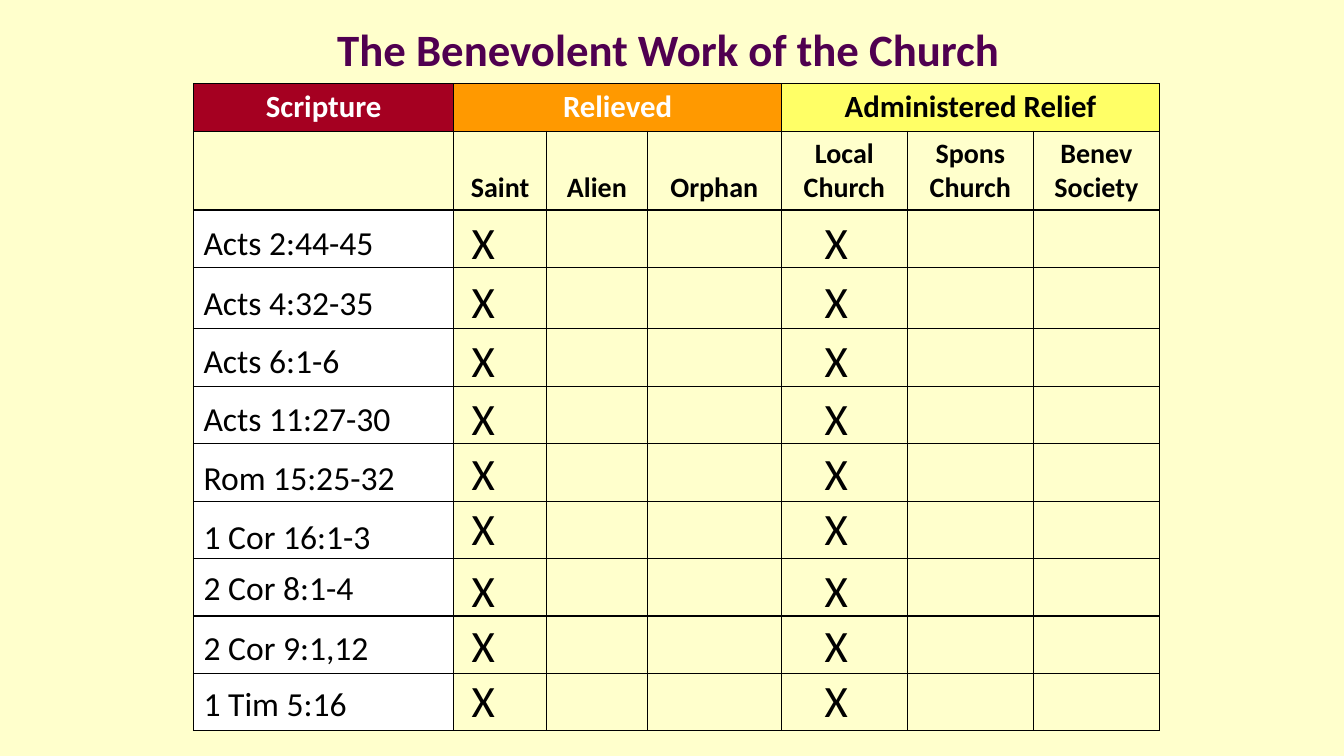
from lxml.etree import SubElement
from pptx import Presentation
from pptx.dml.color import RGBColor
from pptx.enum.text import MSO_ANCHOR as Anchor, PP_ALIGN as Align
from pptx.oxml.ns import qn
from pptx.util import Inches, Pt

CREAM = RGBColor(0xFF, 0xFF, 0xCC)
WHITE = RGBColor(0xFF, 0xFF, 0xFF)
BLACK = RGBColor(0, 0, 0)
PLUM = RGBColor(0x50, 0x00, 0x50)
RED = RGBColor(0xA5, 0x00, 0x21)
ORANGE = RGBColor(0xFF, 0x99, 0x00)
YELLOW = RGBColor(0xFF, 0xFF, 0x66)
FONT = "Calibri"

WIDTHS = [2.58, 0.92, 1, 1.33, 1.25, 1.25, 1.25]
HEIGHTS = [0.47, 0.78, 0.57, 0.61] + [0.57] * 7
# First column, last column, label, fill, text colour
GROUPS = [
    (0, 0, "Scripture", RED, WHITE),
    (1, 3, "Relieved", ORANGE, WHITE),
    (4, 6, "Administered Relief", YELLOW, BLACK),
]
HEADS = ["", "Saint", "Alien", "Orphan",
         "Local\nChurch", "Spons\nChurch", "Benev\nSociety"]
# Verse, top of its label, top of its marks (from the table's top)
VERSES = [
    ("Acts 2:44-45", 1.32, 1.25),
    ("Acts 4:32-35", 1.92, 1.84),
    ("Acts 6:1-6", 2.49, 2.42),
    ("Acts 11:27-30", 3.07, 3.0),
    ("Rom 15:25-32", 3.65, 3.54),
    ("1 Cor 16:1-3", 4.24, 4.09),
    ("2 Cor 8:1-4", 4.75, 4.7),
    ("2 Cor 9:1,12", 5.34, 5.25),
    ("1 Tim 5:16", 5.9, 5.79),
]
MARKS = [2.66, 6.16]  # Saint and Local Church, from the table's left


def write(frame, text, size, color=BLACK, bold=False, align=Align.LEFT):
    frame.text = text
    frame.word_wrap = True
    for para in frame.paragraphs:
        para.alignment = align
        font = para.font
        font.name, font.size, font.bold = FONT, Pt(size), bold
        font.color.rgb = color


def add_title(slide, left, top, width, height):
    title = slide.shapes.title
    title.left, title.top = Inches(left), Inches(top)
    title.width, title.height = Inches(width), Inches(height)
    write(title.text_frame, "The Benevolent Work of the Church",
          32, PLUM, True, Align.CENTER)
    title.text_frame.vertical_anchor = Anchor.MIDDLE


def rule_cell(cell):
    """Draw thin black borders; call before filling the cell."""
    props = cell._tc.get_or_add_tcPr()
    for side in ("a:lnL", "a:lnR", "a:lnT", "a:lnB"):
        line = SubElement(props, qn(side), w=str(Pt(1)))
        fill = SubElement(line, qn("a:solidFill"))
        SubElement(fill, qn("a:srgbClr"), val=str(BLACK))


def add_grid(slide, left, top):
    frame = slide.shapes.add_table(
        len(HEIGHTS), len(WIDTHS), Inches(left), Inches(top),
        Inches(sum(WIDTHS)), Inches(sum(HEIGHTS)))
    table = frame.table
    table.first_row = table.horz_banding = False
    for col, width in zip(table.columns, WIDTHS):
        col.width = Inches(width)
    for r, height in enumerate(HEIGHTS):
        table.rows[r].height = Inches(height)
        for c, cell in enumerate(table.rows[r].cells):
            rule_cell(cell)
            if r > 1 and c == 0:
                cell.fill.solid()
                cell.fill.fore_color.rgb = WHITE
            else:
                cell.fill.background()

    for first, last, label, fill, color in GROUPS:
        cell = table.cell(0, first)
        if last > first:
            cell.merge(table.cell(0, last))
        cell.fill.solid()
        cell.fill.fore_color.rgb = fill
        write(cell.text_frame, label, 22, color, True, Align.CENTER)
    for c, head in enumerate(HEADS):
        if head:
            cell = table.cell(1, c)
            cell.vertical_anchor = Anchor.BOTTOM
            write(cell.text_frame, head, 20, BLACK, True, Align.CENTER)


def add_label(slide, text, size, left, top, width, height):
    box = slide.shapes.add_textbox(
        Inches(left), Inches(top), Inches(width), Inches(height))
    write(box.text_frame, text, size)


def add_verses(slide, left, top):
    for verse, drop, _ in VERSES:
        add_label(slide, verse, 24, left, top + drop, 2.42, 0.5)
    for shift in MARKS:
        for _, _, drop in VERSES:
            add_label(slide, "X", 32, left + shift, top + drop, 0.58, 0.63)


def main():
    deck = Presentation()
    deck.slide_width, deck.slide_height = Inches(13.33), Inches(7.5)
    slide = deck.slides.add_slide(deck.slide_layouts[5])
    slide.background.fill.solid()
    slide.background.fill.fore_color.rgb = CREAM
    add_grid(slide, 1.92, 0.83)
    add_title(slide, 1.92, 0.17, 9.42, 0.63)
    add_verses(slide, 1.92, 0.83)
    deck.save("out.pptx")


if __name__ == "__main__":
    main()
